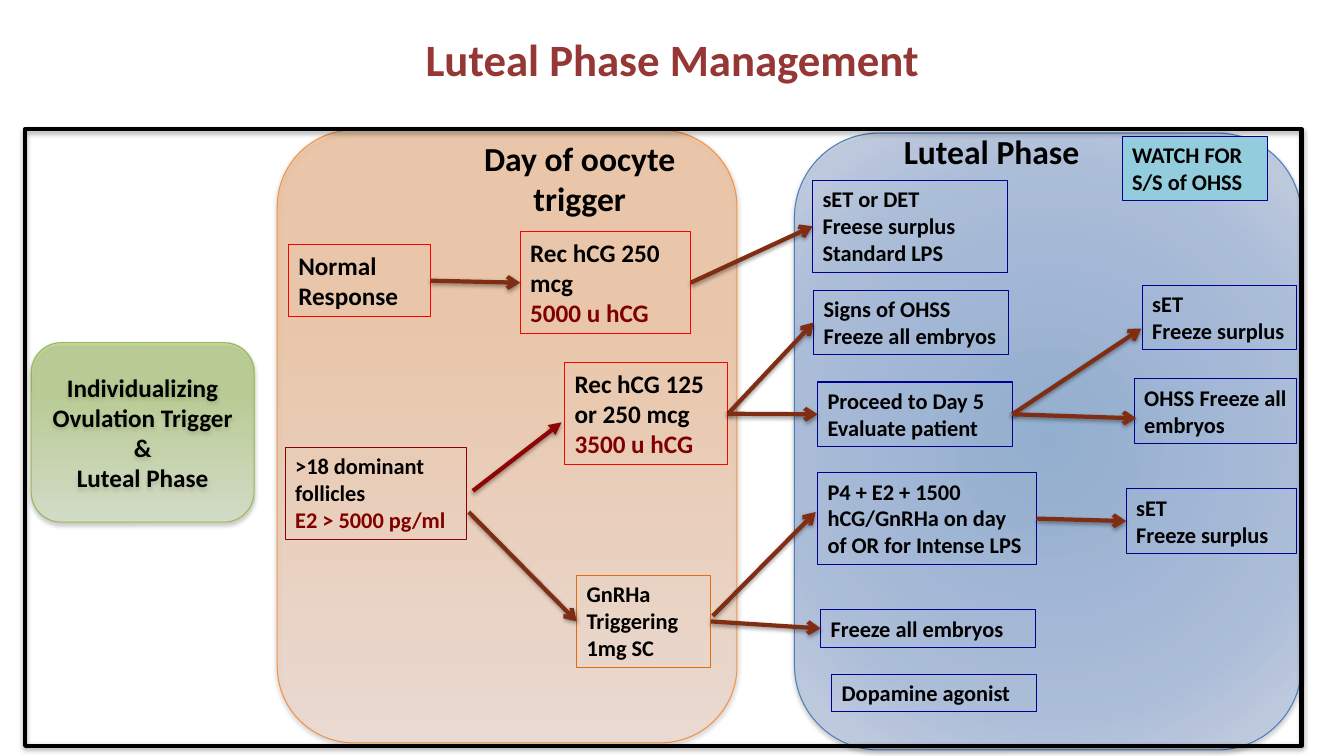
"""Build the luteal phase management flow slide."""
from dataclasses import dataclass
from typing import Any, Optional

from pptx import Presentation
from pptx.dml.color import RGBColor
from pptx.enum.shapes import MSO_CONNECTOR, MSO_SHAPE
from pptx.enum.text import MSO_ANCHOR, MSO_AUTO_SIZE, PP_ALIGN
from pptx.oxml import parse_xml
from pptx.oxml.ns import nsdecls, qn
from pptx.util import Inches, Pt

ROUNDED, RECTANGLE = MSO_SHAPE.ROUNDED_RECTANGLE, MSO_SHAPE.RECTANGLE
STRAIGHT = MSO_CONNECTOR.STRAIGHT
LEFT, CENTER = PP_ALIGN.LEFT, PP_ALIGN.CENTER
MIDDLE = MSO_ANCHOR.MIDDLE
GROW = MSO_AUTO_SIZE.SHAPE_TO_FIT_TEXT
LEFT_SIDE, RIGHT_SIDE = 1, 3
BLACK, RED, NAVY, MAROON, RUST = "000000", "FF0000", "000090", "800000", "802E13"
DOWNWARD = '<a:lin ang="5400000" scaled="0"/>'
RADIAL = ('<a:path path="circle"><a:fillToRect l="100000" t="100000" '
          'r="100000" b="100000"/></a:path>')

Point = tuple[float, float]


@dataclass(frozen=True)
class Run:
    text: str
    color: str = BLACK


Paragraphs = list[list[Run]]


@dataclass(frozen=True)
class Panel:
    place: tuple[float, float, float, float]
    stops: tuple[tuple[int, str], ...]
    opacity: int
    direction: str
    line: str
    shadow: tuple[float, int] = (1.6, 38)


@dataclass(frozen=True)
class Step:
    place: tuple[float, float, float, float]
    paragraphs: Paragraphs
    line: Optional[str] = NAVY
    size: int = 16
    fill: Optional[str] = None
    align: Any = LEFT


@dataclass(frozen=True)
class Arrow:
    start: str | Point
    end: str | Point
    color: str = RUST
    head: str = "arrow"


def lines(*texts: str) -> Paragraphs:
    """Return one black paragraph for each text."""
    return [[Run(text)] for text in texts]


TRIGGER_PANEL = Panel((2.75, 1.29, 4.56, 6.08), ((31, "FF953E"), (100, "FFD2BD")),
                      33, DOWNWARD, "F69240")
LUTEAL_PANEL = Panel((7.88, 1.32, 5.03, 6.12),
                     ((0, "4480C8"), (69, "7DA1DC"), (100, "BACAE9")),
                     46, RADIAL, "4B7EBC", (1.8, 35))
TOPIC_PANEL = Panel((0.31, 3.4, 2.21, 1.78), ((31, "9EC54F"), (100, "D6E8BD")),
                    45, DOWNWARD, "98B955")
FRAME_PLACE = (0.25, 1.28, 12.66, 6.12)

STEPS = {
    "trigger heading": Step((4.23, 1.32, 3.04, 0.91), lines("Day of oocyte trigger"),
                            None, 24, align=CENTER),
    "luteal heading": Step((8.41, 1.25, 2.85, 0.5), lines("Luteal Phase"),
                           None, 24, align=CENTER),
    "follicles": Step((2.83, 4.44, 1.8, 0.91),
                      [[Run(">18 dominant follicles")], [Run("E2 > 5000 pg/ml", MAROON)]],
                      "900000"),
    "agonist": Step((5.72, 5.71, 1.33, 0.91), lines("GnRHa Triggering", "1mg SC"), "E46C0A"),
    "low hCG": Step((5.6, 3.6, 1.62, 1.01),
                    [[Run("Rec hCG 125 or 250 mcg "), Run("3500 u hCG", MAROON)]], RED, 18),
    "signs": Step((8.07, 2.88, 1.93, 0.64), lines("Signs of OHSS", "Freeze all embryos")),
    "day 5": Step((8.11, 3.79, 1.93, 0.64), lines("Proceed to Day 5 Evaluate patient")),
    "intense": Step((8.11, 4.69, 2.17, 0.91),
                    lines("P4 + E2 + 1500 hCG/GnRHa on day of OR for Intense LPS")),
    "freeze all": Step((8.14, 6.05, 2.13, 0.37), lines("Freeze all embryos")),
    "dopamine": Step((8.25, 6.69, 2.03, 0.37), lines("Dopamine agonist")),
    "intense sET": Step((11.17, 4.85, 1.69, 0.64), lines("sET", "Freeze surplus")),
    "watch": Step((11.13, 1.35, 1.44, 0.64), lines("WATCH FOR S/S of OHSS"), fill="93CDDD"),
    "day 5 sET": Step((11.33, 2.83, 1.53, 0.64), lines("sET", "Freeze surplus")),
    "day 5 OHSS": Step((11.25, 3.76, 1.61, 0.64), lines("OHSS Freeze all embryos")),
    "normal": Step((2.86, 2.43, 1.41, 0.71), lines("Normal Response"), RED, 18),
    "full hCG": Step((5.16, 2.3, 1.69, 1.01),
                     [[Run("Rec hCG 250 mcg")], [Run("5000 u hCG", MAROON)]], RED, 18),
    "standard": Step((8.06, 1.79, 1.93, 0.91),
                     lines("sET or DET", "Freese surplus", "Standard LPS")),
}

ARROWS = [
    Arrow((4.65, 5.08), "agonist"),
    Arrow("low hCG", "signs"),
    Arrow("low hCG", "day 5"),
    Arrow((7.07, 6.11), (8.09, 5.08)),
    Arrow("agonist", "freeze all"),
    Arrow("day 5", (11.32, 3.26)),
    Arrow("day 5", (11.27, 4.15)),
    Arrow("intense", "intense sET"),
    Arrow("normal", "full hCG"),
    Arrow("full hCG", "standard"),
    Arrow((4.69, 4.87), (5.57, 4.19), "8D0505", "triangle"),
]


def paint(color_format: Any, color: str) -> None:
    """Set a colour from a hex string."""
    color_format.rgb = RGBColor.from_string(color)


def outline(line: Any, color: str, width: float) -> None:
    """Give a line its colour and width in points."""
    line.fill.solid()
    paint(line.color, color)
    line.width = Pt(width)


def cast_shadow(properties: Any, distance: float, opacity: int) -> None:
    """Add a black shadow straight below a shape or connector."""
    properties.append(parse_xml(
        f'<a:effectLst {nsdecls("a")}><a:outerShdw blurRad="{Pt(3.1)}" dist="{Pt(distance)}" '
        f'dir="5400000" rotWithShape="0"><a:srgbClr val="{BLACK}">'
        f'<a:alpha val="{opacity * 1000}"/></a:srgbClr></a:outerShdw></a:effectLst>'))


def write(text_frame: Any, paragraphs: Paragraphs, size: int, align: Any = CENTER) -> None:
    """Fill a text frame with bold Calibri paragraphs."""
    text_frame.word_wrap = True
    font_values = {"name": "Calibri", "size": Pt(size), "bold": True}
    for index, runs in enumerate(paragraphs):
        paragraph = text_frame.add_paragraph() if index else text_frame.paragraphs[0]
        paragraph.alignment = align
        for part in runs:
            run = paragraph.add_run()
            run.text = part.text
            paint(run.font.color, part.color)
            for attribute, value in font_values.items():
                setattr(run.font, attribute, value)


def draw_panel(shapes: Any, panel: Panel) -> Any:
    """Draw a translucent rounded panel with a gradient."""
    shape = shapes.add_shape(ROUNDED, *map(Inches, panel.place))
    shape.fill.background()
    outline(shape.line, panel.line, 0.75)
    stops = "".join(
        f'<a:gs pos="{position * 1000}"><a:srgbClr val="{color}">'
        f'<a:alpha val="{panel.opacity * 1000}"/></a:srgbClr></a:gs>'
        for position, color in panel.stops)
    properties = shape.element.spPr
    properties.replace(properties.find(qn("a:noFill")), parse_xml(
        f'<a:gradFill {nsdecls("a")} rotWithShape="1"><a:gsLst>{stops}</a:gsLst>'
        f'{panel.direction}</a:gradFill>'))
    cast_shadow(properties, *panel.shadow)
    return shape


def draw_step(shapes: Any, step: Step) -> Any:
    """Draw one text box of the flow."""
    box = shapes.add_textbox(*map(Inches, step.place))
    write(box.text_frame, step.paragraphs, step.size, step.align)
    box.text_frame.auto_size = GROW
    if step.fill:
        box.fill.solid()
        paint(box.fill.fore_color, step.fill)
    if step.line:
        outline(box.line, step.line, 0.75)
    return box


def draw_arrow(shapes: Any, arrow: Arrow, boxes: dict[str, Any]) -> None:
    """Draw an arrow, joined to a step wherever an end names one."""
    start, end = ((0, 0) if isinstance(tip, str) else tip for tip in (arrow.start, arrow.end))
    connector = shapes.add_connector(STRAIGHT, *map(Inches, (*start, *end)))
    if isinstance(arrow.start, str):
        connector.begin_connect(boxes[arrow.start], RIGHT_SIDE)
    if isinstance(arrow.end, str):
        connector.end_connect(boxes[arrow.end], LEFT_SIDE)
    outline(connector.line, arrow.color, 3)
    properties = connector.element.spPr
    properties.find(qn("a:ln")).append(
        parse_xml(f'<a:tailEnd {nsdecls("a")} type="{arrow.head}"/>'))
    cast_shadow(properties, 1.6, 38)


def main() -> None:
    """Build and save the slide."""
    deck = Presentation()
    deck.slide_width, deck.slide_height = Inches(13.33), Inches(7.5)
    slide = deck.slides.add_slide(deck.slide_layouts[5])
    shapes = slide.shapes
    title = shapes.title
    title_place = {"left": 1.67, "top": 0.05, "width": 10, "height": 1.07}
    for attribute, value in title_place.items():
        setattr(title, attribute, Inches(value))
    title.text_frame.vertical_anchor = MIDDLE
    write(title.text_frame, [[Run("Luteal Phase Management", "953735")]], 32)
    for panel in (TRIGGER_PANEL, LUTEAL_PANEL):
        draw_panel(shapes, panel)
    topic = draw_panel(shapes, TOPIC_PANEL)
    topic.text_frame.vertical_anchor = MIDDLE
    write(topic.text_frame, lines("Individualizing Ovulation Trigger", "&", "Luteal Phase"), 18)
    frame = shapes.add_shape(RECTANGLE, *map(Inches, FRAME_PLACE))
    frame.fill.background()
    outline(frame.line, BLACK, 3)
    cast_shadow(frame.element.spPr, 1.8, 35)
    boxes = {name: draw_step(shapes, step) for name, step in STEPS.items()}
    for arrow in ARROWS:
        draw_arrow(shapes, arrow, boxes)
    deck.save("out.pptx")


if __name__ == "__main__":
    main()
